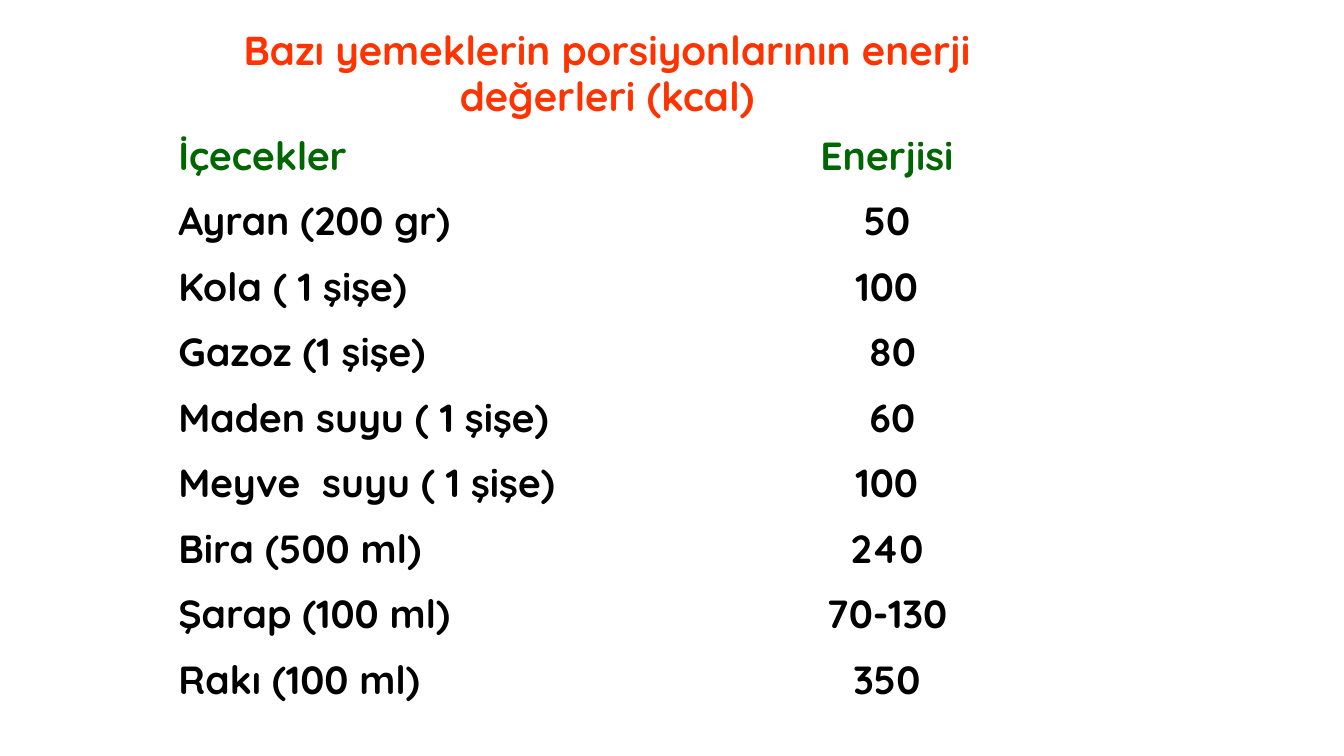
from dataclasses import dataclass

from pptx import Presentation
from pptx.dml.color import RGBColor
from pptx.enum.text import MSO_ANCHOR, MSO_AUTO_SIZE, PP_ALIGN
from pptx.util import Cm, Pt

LEFT, CENTER = PP_ALIGN.LEFT, PP_ALIGN.CENTER
TOP, BOTTOM = MSO_ANCHOR.TOP, MSO_ANCHOR.BOTTOM
NO_AUTOFIT = MSO_AUTO_SIZE.NONE

FONT = "Quicksand"
COLORS = {"title": "FF3300", "header": "006600", "body": "000000"}
TITLE = "Bazı yemeklerin porsiyonlarının enerji değerleri (kcal)"
TITLE_SIZE, TABLE_SIZE = 28.8, 28
TABLE_LEFT, TABLE_TOP = 4.24, 3.18
COLUMN_WIDTHS = (14.81, 6.6)
ROW_HEIGHT = 1.65


@dataclass
class DrinkRow:
    drink: str
    energy: str
    color: str = "body"


ROWS = [
    DrinkRow("İçecekler", "Enerjisi", "header"),
    DrinkRow("Ayran (200 gr)", "50"),
    DrinkRow("Kola ( 1 şişe)", "100"),
    DrinkRow("Gazoz (1 şişe)", " 80"),
    DrinkRow("Maden suyu ( 1 şişe)", " 60"),
    DrinkRow("Meyve  suyu ( 1 şişe)", "100"),
    DrinkRow("Bira (500 ml)", "240"),
    DrinkRow("Şarap (100 ml)", "70-130"),
    DrinkRow("Rakı (100 ml)", "350"),
]


def write_text(text_frame, text: str, size: float, color: str, alignment) -> None:
    paragraph = text_frame.paragraphs[0]
    paragraph.alignment = alignment
    run = paragraph.add_run()
    run.text = text
    run.font.name = FONT
    run.font.size = Pt(size)
    run.font.bold = True
    run.font.color.rgb = RGBColor.from_string(COLORS[color])


def format_title(slide) -> None:
    title = slide.shapes.title
    title.left, title.top = Cm(4.24), Cm(0.43)
    title.width, title.height = Cm(22.12), Cm(2.74)
    text_frame = title.text_frame
    text_frame.word_wrap = True
    text_frame.auto_size = NO_AUTOFIT
    text_frame.vertical_anchor = BOTTOM
    write_text(text_frame, TITLE, TITLE_SIZE, "title", CENTER)
    text_frame.paragraphs[0].line_spacing = 0.95


def add_energy_table(slide) -> None:
    table = slide.shapes.add_table(
        len(ROWS), len(COLUMN_WIDTHS), Cm(TABLE_LEFT), Cm(TABLE_TOP),
        Cm(sum(COLUMN_WIDTHS)), Cm(ROW_HEIGHT * len(ROWS)),
    ).table
    table.first_row = False
    table.horz_banding = False
    for column, width in zip(table.columns, COLUMN_WIDTHS):
        column.width = Cm(width)
    for index, row in enumerate(ROWS):
        table.rows[index].height = Cm(ROW_HEIGHT)
        entries = ((row.drink, LEFT), (row.energy, CENTER))
        for cell, (text, alignment) in zip(table.rows[index].cells, entries):
            cell.fill.background()
            cell.vertical_anchor = TOP
            write_text(cell.text_frame, text, TABLE_SIZE, row.color, alignment)


def main() -> None:
    presentation = Presentation()
    presentation.slide_width, presentation.slide_height = Cm(33.87), Cm(19.05)
    slide = presentation.slides.add_slide(presentation.slide_layouts[5])

    # Heading
    format_title(slide)

    # Drinks and their energy values
    add_energy_table(slide)

    presentation.save("out.pptx")


if __name__ == "__main__":
    main()
